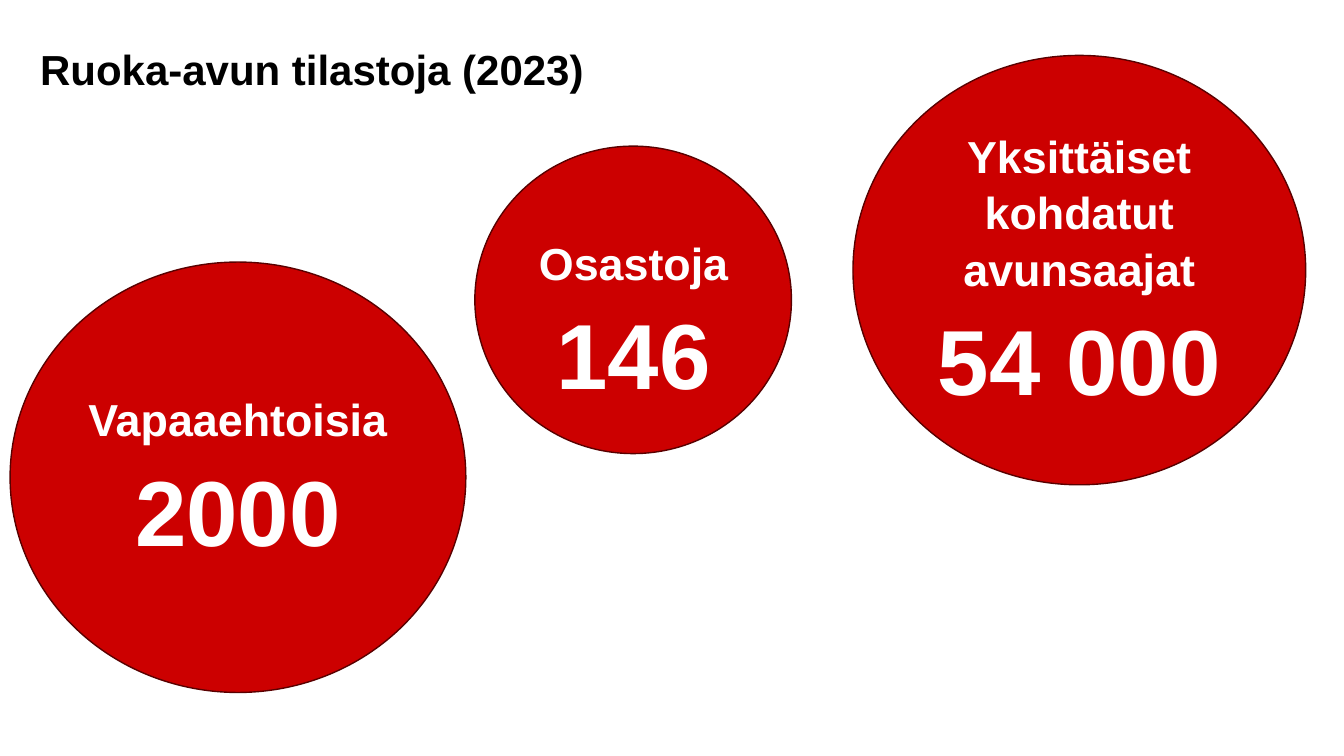
from pptx import Presentation
from pptx.dml.color import RGBColor
from pptx.enum.shapes import MSO_SHAPE
from pptx.enum.text import MSO_ANCHOR, PP_ALIGN
from pptx.util import Inches, Pt

RED = RGBColor(0xCC, 0x00, 0x00)
DARK_RED = RGBColor(0x59, 0x00, 0x00)
WHITE = RGBColor(0xFF, 0xFF, 0xFF)
BLACK = RGBColor(0x00, 0x00, 0x00)


def style(p, size, color):
    for r in p.runs:
        r.font.name = "Arial"
        r.font.size = Pt(size)
        r.font.bold = True
        r.font.color.rgb = color


def add_title(s, box, text):
    tf = s.shapes.add_textbox(*map(Inches, box)).text_frame
    tf.word_wrap = True
    tf.vertical_anchor = MSO_ANCHOR.MIDDLE
    tf.text = text
    style(tf.paragraphs[0], 30, BLACK)


def add_circle(s, box):
    sp = s.shapes.add_shape(MSO_SHAPE.OVAL, *map(Inches, box))
    sp.shadow.inherit = False
    sp.fill.solid()
    sp.fill.fore_color.rgb = RED
    sp.line.color.rgb = DARK_RED
    sp.line.width = Pt(1)
    return sp


def write_figure(sp, label, value, anchor):
    """Write a label with its large number below."""
    tf = sp.text_frame
    tf.word_wrap = True
    tf.vertical_anchor = anchor
    tf.text = f"{label}\n{value}"
    for p, size in zip(tf.paragraphs, (32, 66)):
        p.alignment = PP_ALIGN.CENTER
        p.line_spacing = 1.05
        style(p, size, WHITE)
    tf.paragraphs[1].space_before = Pt(2)


def add_statistics(s):
    # Branches: the figure sits slightly below the circle's centre
    x, y, w, h = 4.71, 1.45, 3.14, 3.05
    add_circle(s, (x, y, w, h))
    caption = s.shapes.add_textbox(*map(Inches, (x + 0.07, y + 0.81, 3.01, 1.82)))
    write_figure(caption, "Osastoja", "146", MSO_ANCHOR.TOP)

    # Volunteers and people helped: the figure is centred in the circle
    for box, label, value in (
        ((0.1, 2.6, 4.52, 4.27), "Vapaaehtoisia", "2000"),
        ((8.46, 0.55, 4.49, 4.26), "Yksittäiset kohdatut avunsaajat", "54 000"),
    ):
        write_figure(add_circle(s, box), label, value, MSO_ANCHOR.MIDDLE)


def main():
    prs = Presentation()
    prs.slide_width, prs.slide_height = Inches(13.33), Inches(7.5)
    s = prs.slides.add_slide(prs.slide_layouts[6])
    add_title(s, (0.3, 0.26, 11.5, 0.85), "Ruoka-avun tilastoja (2023)")
    add_statistics(s)
    prs.save("out.pptx")


if __name__ == "__main__":
    main()
